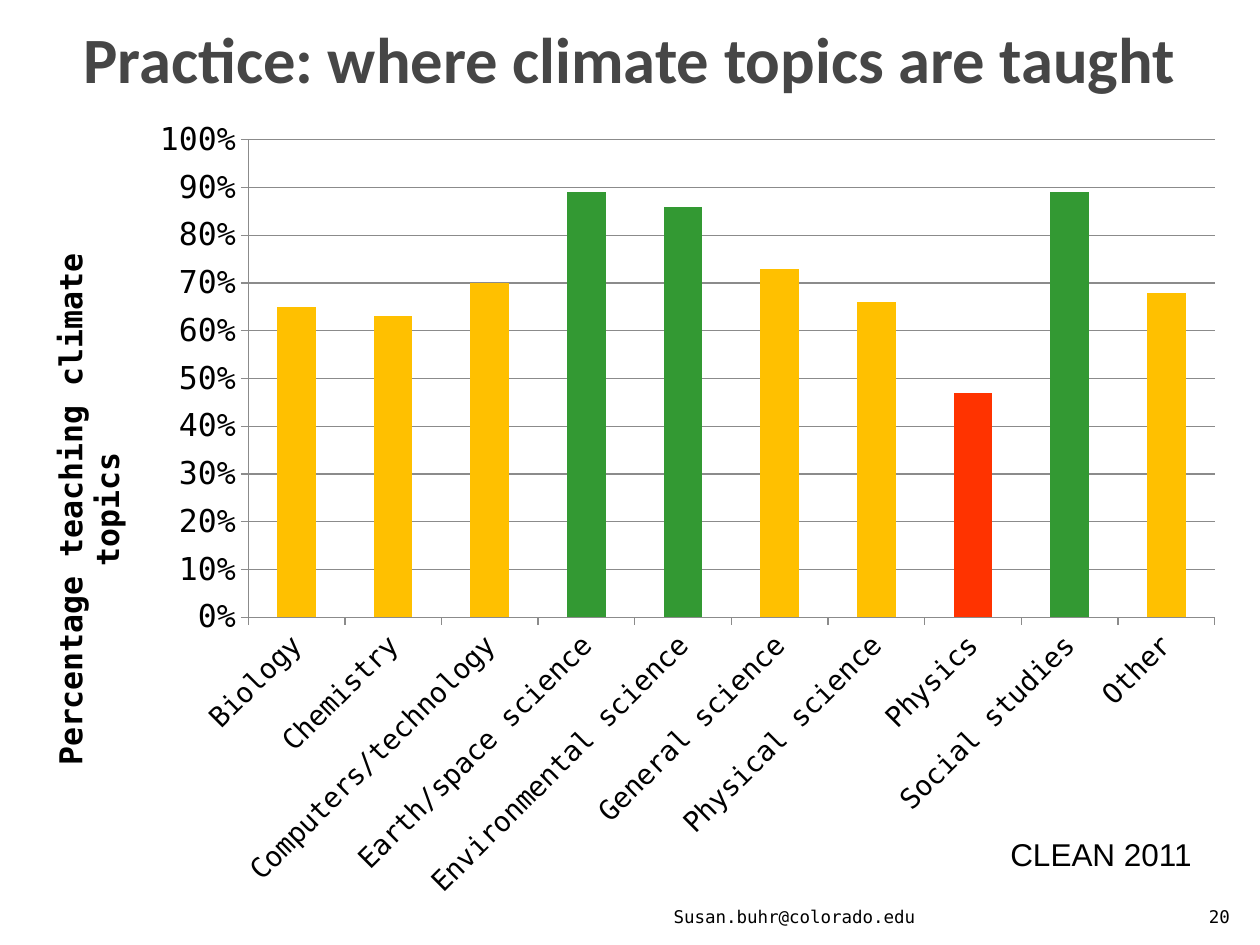
from pptx import Presentation
from pptx.chart.data import CategoryChartData
from pptx.dml.color import RGBColor
from pptx.enum.chart import XL_CHART_TYPE, XL_TICK_MARK
from pptx.enum.text import MSO_ANCHOR, PP_ALIGN
from pptx.oxml import parse_xml
from pptx.oxml.ns import nsdecls, qn
from pptx.util import Inches, Pt

HUES = {"title": "464646", "text": "000000", "line": "8B8B8B",
        "high": "339933", "mid": "FFC000", "low": "FF3300"}
MONO = "DejaVu Sans Mono"
SHARES = {
    "Biology": 0.65, "Chemistry": 0.63, "Computers/technology": 0.70,
    "Earth/space science": 0.89, "Environmental science": 0.86,
    "General science": 0.73, "Physical science": 0.66, "Physics": 0.47,
    "Social studies": 0.89, "Other": 0.68,
}


def rgb(key):
    return RGBColor.from_string(HUES[key])


def set_all(item, **vals):
    for name, val in vals.items():
        setattr(item, name, val)


def style(font, hue="text", **vals):
    set_all(font, **vals)
    font.color.rgb = rgb(hue)


def place(shape, box):
    for name, val in zip(("left", "top", "width", "height"), box):
        setattr(shape, name, Inches(val))


def fill_text(shape, text, align, anchor, **vals):
    frame = shape.text_frame
    set_all(frame, word_wrap=True, vertical_anchor=anchor)
    para = frame.paragraphs[0]
    para.alignment = align
    run = para.add_run()
    run.text = text
    style(run.font, **vals)


def add_title(slide, box):
    title = slide.shapes.title
    place(title, box)
    fill_text(title, "Practice: where climate topics are taught",
              PP_ALIGN.CENTER, MSO_ANCHOR.MIDDLE,
              hue="title", name="Calibri", size=Pt(36.9), bold=True)


def add_note(slide, box, text, align, anchor, **vals):
    note = slide.shapes.add_textbox(*map(Inches, box))
    fill_text(note, text, align, anchor, **vals)


def set_layout(node, after, box, spot, target=""):
    """Fix a chart part at a spot given in inches within the chart box."""
    for old in node.findall(qn("c:layout")):
        node.remove(old)
    modes = "".join(f'<c:{a}Mode val="edge"/>' for a in "xy")
    sizes = "".join(f'<c:{key} val="{part / whole}"/>' for key, part, whole
                    in zip("xywh", spot, box[2:] * 2))
    layout = parse_xml(f'<c:layout {nsdecls("c")}><c:manualLayout>'
                       f'{target}{modes}{sizes}</c:manualLayout></c:layout>')
    if after is None:
        node.insert(0, layout)
    else:
        after.addnext(layout)


def add_bars(slide, box):
    data = CategoryChartData(number_format="0%")
    data.categories = list(SHARES)
    data.add_series("Series 1", list(SHARES.values()))
    chart = slide.shapes.add_chart(XL_CHART_TYPE.COLUMN_CLUSTERED,
                                   *map(Inches, box), data).chart
    set_all(chart, has_legend=False, has_title=False)
    style(chart.font, name=MONO, size=Pt(18))

    # Bars, coloured by share
    plot = chart.plots[0]
    set_all(plot, gap_width=150, vary_by_categories=False)
    series = plot.series[0]
    series.format.fill.solid()
    series.format.fill.fore_color.rgb = rgb("high")
    for i, share in enumerate(SHARES.values()):
        if share < 0.8:
            fill = series.points[i].format.fill
            fill.solid()
            fill.fore_color.rgb = rgb("low" if share < 0.5 else "mid")

    # Axes
    cat, val = chart.category_axis, chart.value_axis
    set_all(val, minimum_scale=0, maximum_scale=1, major_unit=0.1,
            has_major_gridlines=True)
    set_all(val.tick_labels, number_format="0%", number_format_is_linked=False)
    for axis, size in ((cat, 16), (val, 18)):
        axis.major_tick_mark = XL_TICK_MARK.OUTSIDE
        style(axis.tick_labels.font, name=MONO, size=Pt(size))
        axis.format.line.color.rgb = rgb("line")
    val.major_gridlines.format.line.color.rgb = rgb("line")
    cat._element.find(qn("c:txPr")).find(qn("a:bodyPr")).set("rot", "-2700000")

    # Axis title
    name = val.axis_title
    frame = name.text_frame
    frame.text = "Percentage teaching climate topics"
    style(frame.paragraphs[0].runs[0].font, name=MONO, size=Pt(18), bold=True)
    body = frame._txBody.find(qn("a:bodyPr"))
    body.set("rot", "-5400000")
    body.set("vert", "horz")
    node = name._element
    set_layout(node, node.find(qn("c:tx")), box, (0.18, 1.14))

    # Plot area
    set_layout(chart._chartSpace.chart.plotArea, None, box,
               (1.8, 0.28, 7.67, 3.79), '<c:layoutTarget val="inner"/>')


def main():
    deck = Presentation()
    set_all(deck, slide_width=Inches(10), slide_height=Inches(7.5))
    slide = deck.slides.add_slide(deck.slide_layouts[5])
    add_title(slide, (0.5, -0.17, 9, 1.25))
    add_bars(slide, (0.17, 0.83, 9.67, 6.42))

    # Footer and source
    small = {"name": MONO, "size": Pt(10)}
    foot = (PP_ALIGN.RIGHT, MSO_ANCHOR.BOTTOM)
    add_note(slide, (9.46, 7.01, 0.4, 0.4), "20", *foot, **small)
    add_note(slide, (4.79, 7.01, 2.57, 0.4), "Susan.buhr@colorado.edu",
             *foot, **small)
    add_note(slide, (7.92, 6.58, 1.83, 0.42), "CLEAN 2011",
             PP_ALIGN.LEFT, MSO_ANCHOR.TOP, name="Arial", size=Pt(18))
    deck.save("out.pptx")


if __name__ == "__main__":
    main()
